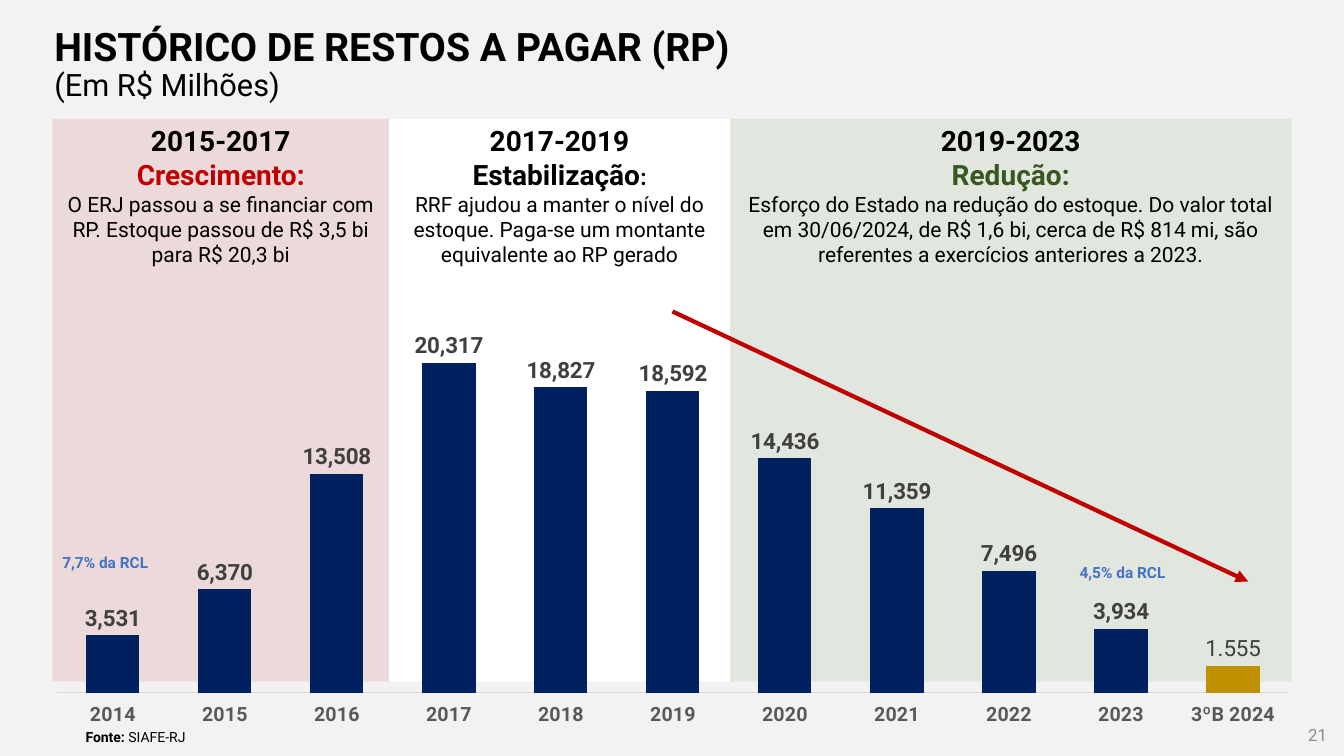
from dataclasses import dataclass
from lxml.etree import SubElement
from pptx import Presentation
from pptx.chart.data import CategoryChartData
from pptx.dml.color import RGBColor
from pptx.enum.chart import XL_CHART_TYPE, XL_LABEL_POSITION, XL_TICK_LABEL_POSITION, XL_TICK_MARK
from pptx.enum.shapes import MSO_CONNECTOR, MSO_SHAPE
from pptx.enum.text import MSO_ANCHOR, PP_ALIGN
from pptx.oxml.ns import qn
from pptx.util import Inches, Pt


@dataclass(frozen=True)
class Theme:
    face: str = "Roboto"
    back: str = "F2F2F2"
    black: str = "000000"
    white: str = "FFFFFF"
    red: str = "C00000"
    green: str = "548235"
    dark: str = "385723"
    navy: str = "002060"
    gold: str = "BF9000"
    blue: str = "4472C4"
    label: str = "404040"
    axis: str = "595959"
    rule: str = "D9D9D9"
    gray: str = "8C8C8C"
    title: int = 28
    sub: int = 22
    head: int = 20
    value: int = 16
    body: int = 15
    year: int = 14
    page: int = 12
    note: int = 11
    small: int = 10


class Deck:
    def __init__(self, theme):
        self.theme = theme
        self.file = Presentation()
        self.file.slide_width = Inches(13.33)
        self.file.slide_height = Inches(7.5)
        self.slide = self.file.slides.add_slide(self.file.slide_layouts[6])
        self.paint(self.slide.background.fill, theme.back)

    def paint(self, fill, color):
        fill.solid()
        fill.fore_color.rgb = RGBColor.from_string(color)

    def style(self, font, size, color, bold=False):
        font.name = self.theme.face
        font.size = Pt(size)
        font.bold = bold
        font.color.rgb = RGBColor.from_string(color)

    def put(self, frame, paras, align=PP_ALIGN.LEFT, space=None):
        frame.word_wrap = True
        for i, runs in enumerate(paras):
            para = frame.paragraphs[0] if i == 0 else frame.add_paragraph()
            para.alignment = align
            if space:
                para.line_spacing = space
            for text, *look in runs:
                if text == "\n":
                    para.add_line_break()
                    continue
                run = para.add_run()
                run.text = text
                self.style(para.font if len(runs) == 1 else run.font, *look)

    def text(self, box, paras, anchor=MSO_ANCHOR.TOP, **kind):
        frame = self.slide.shapes.add_textbox(*map(Inches, box)).text_frame
        frame.vertical_anchor = anchor
        self.put(frame, paras, **kind)

    def panel(self, left, right, color, alpha, paras):
        box = map(Inches, (left, 1.18, right - left, 5.58))
        shape = self.slide.shapes.add_shape(MSO_SHAPE.RECTANGLE, *box)
        shape.shadow.inherit = False
        shape.line.fill.background()
        self.paint(shape.fill, color)
        if alpha < 100:
            tint = shape._element.spPr.find(".//" + qn("a:srgbClr"))
            SubElement(tint, qn("a:alpha")).set("val", str(alpha * 1000))
        shape.text_frame.vertical_anchor = MSO_ANCHOR.TOP
        self.put(shape.text_frame, paras, PP_ALIGN.CENTER)

    def arrow(self, start, end, color, width):
        line = self.slide.shapes.add_connector(
            MSO_CONNECTOR.STRAIGHT, *map(Inches, start + end))
        line.line.color.rgb = RGBColor.from_string(color)
        line.line.width = Pt(width)
        shape = line._element.spPr
        SubElement(shape.find(qn("a:ln")), qn("a:tailEnd")).set("type", "triangle")
        SubElement(shape, qn("a:effectLst"))

    def place(self, chart, **sides):
        plot = chart._chartSpace.chart.plotArea
        old = plot.find(qn("c:layout"))
        if old is not None:
            plot.remove(old)
        grid = SubElement(plot, qn("c:layout"))
        plot.insert(0, grid)
        spot = SubElement(grid, qn("c:manualLayout"))
        modes = {"layoutTarget": "inner", "xMode": "edge", "yMode": "edge"}
        for tag, val in (modes | sides).items():
            SubElement(spot, qn("c:" + tag)).set("val", str(val))

    def chart(self, box, cats, vals, last):
        look = self.theme
        data = CategoryChartData(number_format="#,##0")
        data.categories = cats
        data.add_series("Restos a Pagar", vals)
        chart = self.slide.shapes.add_chart(
            XL_CHART_TYPE.COLUMN_CLUSTERED, *map(Inches, box), data).chart
        chart.has_legend = chart.has_title = False
        self.style(chart.font, look.small, look.black)
        self.place(chart, x=0.02, y=0.02, w=0.96, h=0.9)

        axis = chart.category_axis
        axis.major_tick_mark = XL_TICK_MARK.NONE
        axis.tick_label_position = XL_TICK_LABEL_POSITION.LOW
        axis.format.line.color.rgb = RGBColor.from_string(look.rule)
        axis.format.line.width = Pt(0.75)
        self.style(axis.tick_labels.font, look.year, look.axis, True)
        scale = chart.value_axis
        scale.visible = scale.has_major_gridlines = False
        scale.minimum_scale, scale.maximum_scale = 0, 25000

        plot = chart.plots[0]
        plot.vary_by_categories = False
        plot.gap_width, plot.overlap = 111, 8
        bars = plot.series[0]
        self.paint(bars.format.fill, look.navy)
        tags = bars.data_labels
        tags.show_value = True
        tags.number_format = "#,##0"
        tags.number_format_is_linked = False
        tags.position = XL_LABEL_POSITION.OUTSIDE_END
        self.style(tags.font, look.value, look.label, True)

        point = bars.points[len(vals) - 1]
        self.paint(point.format.fill, look.gold)
        run = point.data_label.text_frame.paragraphs[0].add_run()
        run.text = last
        self.style(run.font, look.value, look.label)
        point.data_label.position = XL_LABEL_POSITION.OUTSIDE_END


def main():
    look = Theme()
    deck = Deck(look)
    panels = [
        (7.24, 12.81, look.green, 10, "2019-2023", [("Redução:", look.head, look.dark, True)],
         "Esforço do Estado na redução do estoque. Do valor total em 30/06/2024, "
         "de R$ 1,6 bi, cerca de R$ 814 mi, são referentes a exercícios anteriores a 2023."),
        (3.86, 7.24, look.white, 100, "2017-2019",
         [("Estabilização", look.head, look.black, True), (":", look.value, look.black, True)],
         "RRF ajudou a manter o nível do estoque. Paga-se um montante equivalente ao RP gerado"),
        (0.52, 3.86, look.red, 10, "2015-2017", [("Crescimento:", look.head, look.red, True)],
         "O ERJ passou a se financiar com RP. Estoque passou de R$ 3,5 bi para R$ 20,3 bi"),
    ]
    for left, right, color, alpha, years, head, body in panels:
        deck.panel(left, right, color, alpha, [
            [(years, look.head, look.black, True)],
            head + [("\n",), (body, look.body, look.black)]])

    deck.chart((0.31, 2.76, 12.73, 4.47),
               [str(year) for year in range(2014, 2024)] + ["3ºB 2024"],
               [3531, 6370, 13508, 20317, 18827, 18592, 14436, 11359, 7496, 3934, 1642],
               "1.555")
    deck.text((0.44, 0.16, 9.55, 0.97), [
        [("HISTÓRICO DE RESTOS A PAGAR (RP)", look.title, look.black, True)],
        [("(Em R$ Milhões)", look.sub, look.black)]], MSO_ANCHOR.MIDDLE, space=0.9)
    deck.text((0.75, 7.18, 5.36, 0.27), [
        [("Fonte: ", look.small, look.black, True), ("SIAFE-RJ", look.small, look.black)]])
    deck.arrow((6.67, 3.09), (12.38, 5.77), look.red, 3)
    for left, top, share in [(0.52, 5.44, "7,7% da RCL"), (10.61, 5.54, "4,5% da RCL")]:
        deck.text((left, top, 1.16, 0.29), [[(share, look.note, look.blue, True)]])
    deck.text((12.3, 7.09, 0.96, 0.4), [[("21", look.page, look.gray)]],
              MSO_ANCHOR.MIDDLE, align=PP_ALIGN.RIGHT)
    deck.file.save("out.pptx")


if __name__ == "__main__":
    main()
